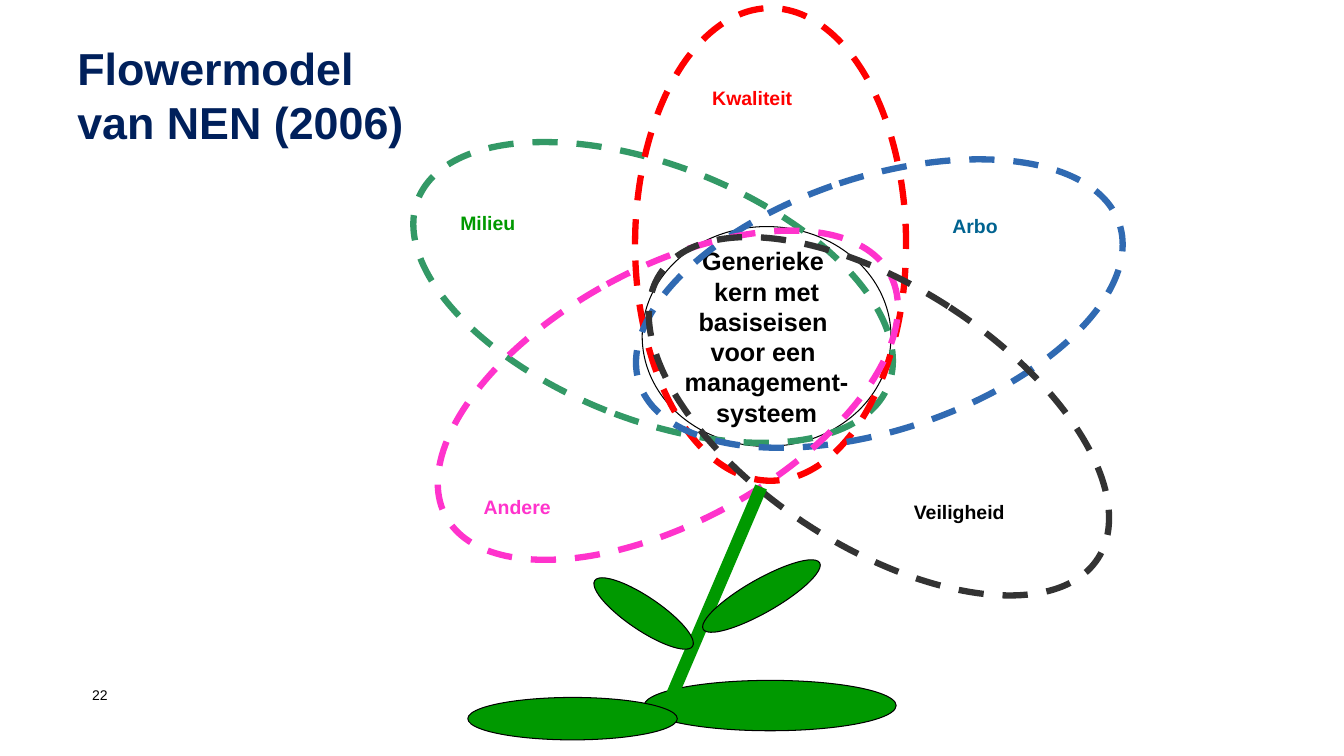
from pptx import Presentation
from pptx.dml.color import RGBColor
from pptx.enum.dml import MSO_LINE
from pptx.enum.shapes import MSO_CONNECTOR, MSO_SHAPE
from pptx.enum.text import MSO_ANCHOR, PP_ALIGN
from pptx.oxml.ns import qn
from pptx.util import Cm, Pt
from lxml.etree import SubElement

# Content: lengths in cm, angles in degrees
BLACK, GREEN, NAVY = "000000", "009900", "00205B"
TITLE = ["Flowermodel", "van NEN (2006)"]
CORE = ["Generieke ", " kern met ", "basiseisen ", "voor een ",
        "management-", "systeem"]
# Petal: centre, size, angle, line colour; label, left, top, width, colour
PETALS = [
    ((16.46, 7.37), (6.4, 12.75), 291.6, "339966",
     "Milieu", 11.35, 4.62, 2.13, GREEN),
    ((19.42, 6.16), (6.83, 11.91), 0, "FF0000",
     "Kwaliteit", 17.7, 1.47, 2.87, "FF0000"),
    ((22.16, 7.65), (6.38, 12.75), 71.6, "306AB2",
     "Arbo", 23.75, 4.7, 1.83, "006390"),
    ((16.83, 9.96), (6.38, 12.75), 61.3, "FF33CC",
     "Andere", 11.94, 11.79, 2.46, "FF33CC"),
    ((22.15, 10.49), (6.55, 13.16), 123, "333333",
     "Veiligheid", 22.78, 11.91, 3.18, BLACK),
]
# Leaf: centre, size, angle; the first lies behind the stem
LEAVES = [
    ((19.41, 17.78), (6.35, 1.27), 0),
    ((14.43, 18.11), (5.28, 1.07), 0),
    ((19.19, 15.02), (3.38, 0.84), 330.3),
    ((16.22, 15.46), (2.97, 0.84), 34),
]
STEM = (19.18, 12.27, 16.64, 18.21)

deck = Presentation()
deck.slide_width, deck.slide_height = Cm(33.87), Cm(19.05)
slide = deck.slides.add_slide(deck.slide_layouts[6])
shapes = slide.shapes


def color(code):
    return RGBColor.from_string(code)


def oval(mid, size, angle, line, width, fill=None):
    (x, y), (w, h) = mid, size
    shape = shapes.add_shape(MSO_SHAPE.OVAL, Cm(x - w / 2), Cm(y - h / 2),
                             Cm(w), Cm(h))
    shape.rotation = angle
    shape.shadow.inherit = False
    if fill:
        shape.fill.solid()
        shape.fill.fore_color.rgb = color(fill)
    else:
        shape.fill.background()
    shape.line.color.rgb = color(line)
    shape.line.width = Pt(width)
    return shape


def write(par, text, size, code, bold=True):
    run = par.add_run()
    run.text = text
    font = run.font
    font.name, font.size, font.bold = "Arial", Pt(size), bold
    font.color.rgb = color(code)
    return run


def box(x, y, w, h):
    frame = shapes.add_textbox(Cm(x), Cm(y), Cm(w), Cm(h)).text_frame
    frame.word_wrap = False
    return frame


def leaf(mid, size, angle):
    oval(mid, size, angle, BLACK, 0.75, GREEN)


# Core of the flower
frame = oval((19.32, 8.48), (6.27, 5.54), 0, BLACK, 0.75).text_frame
frame.word_wrap = False
frame.vertical_anchor = MSO_ANCHOR.MIDDLE
for i, text in enumerate(CORE):
    par = frame.add_paragraph() if i else frame.paragraphs[0]
    par.alignment = PP_ALIGN.CENTER
    write(par, text, 18, BLACK)

# Petals with lowered labels
for mid, size, angle, line, name, x, y, w, code in PETALS:
    oval(mid, size, angle, line, 4.5).line.dash_style = MSO_LINE.DASH
    run = write(box(x, y, w, 0.94).paragraphs[0], name, 24, code)
    run.font._element.set("baseline", "-25000")

# Stem and leaves
leaf(*LEAVES[0])
stem = shapes.add_connector(MSO_CONNECTOR.STRAIGHT, *map(Cm, STEM))
stem.line.color.rgb = color(GREEN)
stem.line.width = Pt(9)
SubElement(stem._element.spPr, qn("a:effectLst"))
for item in LEAVES[1:]:
    leaf(*item)

# Title
par = box(1.7, 0.91, 8.79, 3).paragraphs[0]
for i, text in enumerate(TITLE):
    if i:
        par.add_line_break()
    write(par, text, 32, NAVY)

# Page number
frame = box(2.32, 17.3, 0.6, 0.43)
frame.word_wrap = True
frame.margin_left = frame.margin_right = 0
frame.margin_top = frame.margin_bottom = 0
frame.vertical_anchor = MSO_ANCHOR.MIDDLE
par = frame.paragraphs[0]
par.alignment = PP_ALIGN.LEFT
write(par, "22", 10, BLACK, False)

deck.save("out.pptx")
